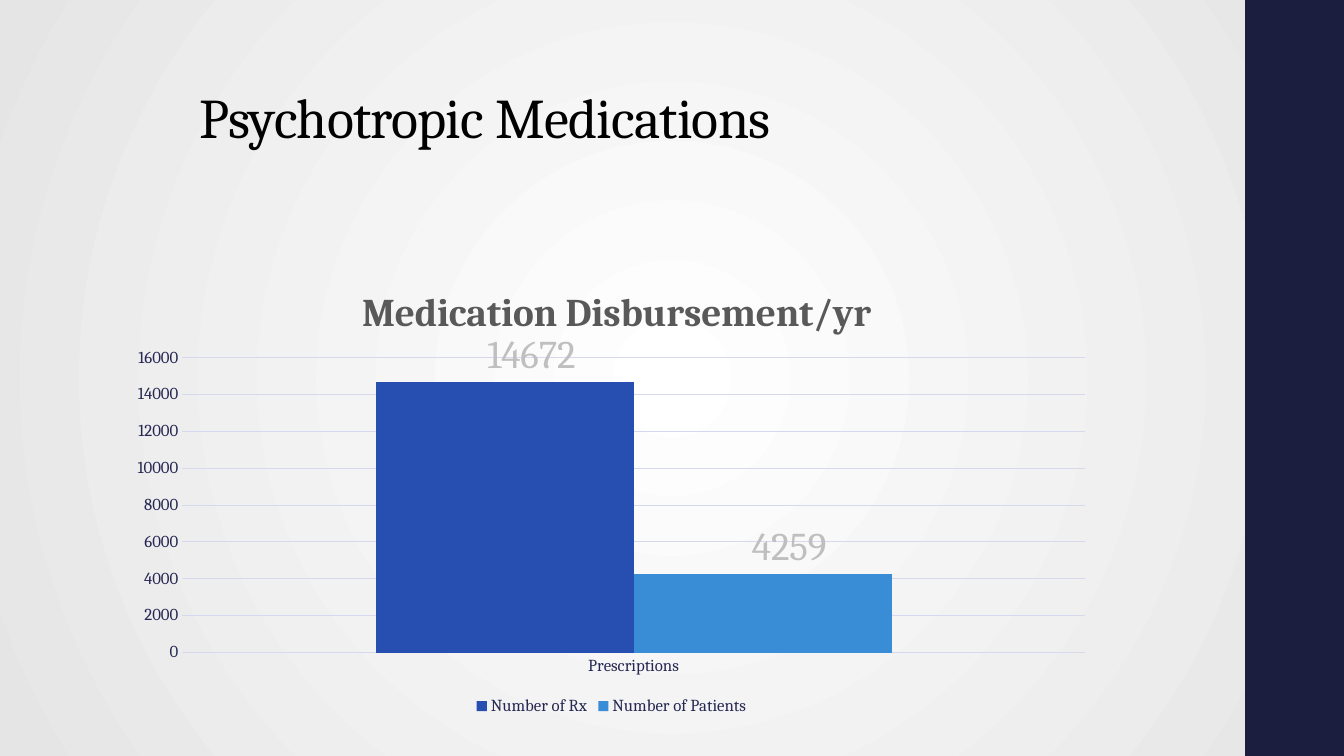
from lxml import etree
from pptx import Presentation
from pptx import util as u
from pptx.chart.data import CategoryChartData
from pptx.dml.color import RGBColor
from pptx.enum import chart as ch, shapes, text
from pptx.oxml import ns

NAVY = RGBColor(0x1B, 0x1E, 0x3E)
INK = RGBColor(0x24, 0x28, 0x52)
BLACK = RGBColor(0, 0, 0)
GRAY = RGBColor(0x59, 0x59, 0x59)
PALE = RGBColor(0xBF, 0xBF, 0xBF)
GRID = RGBColor(0xD6, 0xD8, 0xED)
WHITE = RGBColor(0xFF, 0xFF, 0xFF)
EDGE = RGBColor(0xE5, 0xE5, 0xE5)
BLUE = RGBColor(0x27, 0x4F, 0xB2)
SKY = RGBColor(0x39, 0x8C, 0xD6)


def style(font, size, color, bold=False):
    form = {"name": "Cambria", "size": u.Pt(size), "bold": bold}
    for key, val in form.items():
        setattr(font, key, val)
    font.color.rgb = color


def place(node, spot, **vals):
    for old in node.findall(ns.qn("c:layout")):
        node.remove(old)
    lay = etree.Element(ns.qn("c:layout"))
    man = etree.SubElement(lay, ns.qn("c:manualLayout"))
    for key, val in vals.items():
        etree.SubElement(man, ns.qn("c:" + key)).set("val", str(val))
    node.insert(spot, lay)


deck = Presentation()
deck.slide_width, deck.slide_height = u.Inches(13.33), u.Inches(7.5)
wide, high = deck.slide_width, deck.slide_height
slide = deck.slides.add_slide(deck.slide_layouts[6])

back = slide.background.fill
back.gradient()
for stop, color, pos in zip(back.gradient_stops, (WHITE, EDGE), (0, 1)):
    stop.color.rgb = color
    stop.position = pos
grad = slide.background._cSld.find(".//" + ns.qn("a:gradFill"))
grad.remove(grad.find(ns.qn("a:lin")))
ring = etree.SubElement(grad, ns.qn("a:path"), {"path": "circle"})
etree.SubElement(ring, ns.qn("a:fillToRect"), {side: "100000" for side in "ltrb"})

left = u.Inches(12.35)
band = slide.shapes.add_shape(
    shapes.MSO_SHAPE.RECTANGLE, left, 0, wide - left, high)
band.shadow.inherit = False
band.fill.solid()
band.fill.fore_color.rgb = NAVY
band.line.fill.background()

head = slide.shapes.add_textbox(
    int(wide * 0.141), 0, int(wide * 0.64), int(high * 0.204))
frame = head.text_frame
for key, val in {"word_wrap": True, "vertical_anchor": text.MSO_ANCHOR.BOTTOM}.items():
    setattr(frame, key, val)
para = frame.paragraphs[0]
para.line_spacing = 1.07
run = para.add_run()
run.text = "Psychotropic Medications"
style(run.font, 40, BLACK)
run.font._element.set("spc", "-50")

data = CategoryChartData()
data.categories = ["Prescriptions"]
data.add_series("Number of Rx", [14672])
data.add_series("Number of Patients", [4259])
chart = slide.shapes.add_chart(
    ch.XL_CHART_TYPE.COLUMN_CLUSTERED, int(wide * 0.088), int(high * 0.34),
    int(wide * 0.734), int(high * 0.612), data).chart
style(chart.font, 10, BLACK)

chart.has_title = True
title = chart.chart_title
title.include_in_layout = False
line = title.text_frame.paragraphs[0].add_run()
line.text = "Medication Disbursement/yr"
style(line.font, 28, GRAY, True)
place(title._element, 1, xMode="edge", yMode="edge", x=0.24, y=0.05)
place(chart._chartSpace.chart.plotArea, 0, layoutTarget="inner",
      xMode="edge", yMode="edge", x=0.065, y=0.218, w=0.915, h=0.637)

chart.has_legend = True
key = chart.legend
key.position = ch.XL_LEGEND_POSITION.BOTTOM
key.include_in_layout = False
style(key.font, 12, INK)

cats, vals = chart.category_axis, chart.value_axis
for axis in (cats, vals):
    axis.major_tick_mark = axis.minor_tick_mark = ch.XL_TICK_MARK.NONE
    style(axis.tick_labels.font, 12, INK)
vals.minimum_scale, vals.maximum_scale, vals.major_unit = 0, 16000, 2000
vals.format.line.fill.background()
cats.has_major_gridlines = False
vals.has_major_gridlines = True
for rule in (cats.format.line, vals.major_gridlines.format.line):
    rule.color.rgb = GRID
    rule.width = u.Pt(0.75)

plot = chart.plots[0]
plot.gap_width, plot.overlap, plot.vary_by_categories = 150, 0, False
for bar, color in zip(plot.series, (BLUE, SKY)):
    bar.format.fill.solid()
    bar.format.fill.fore_color.rgb = color
    label = bar.points[0].data_label
    style(label.font, 28, PALE)
    label.position = ch.XL_LABEL_POSITION.OUTSIDE_END
    place(bar._element.find(".//" + ns.qn("c:dLbl")), 1, x=0.027, y=0)

deck.save("out.pptx")
